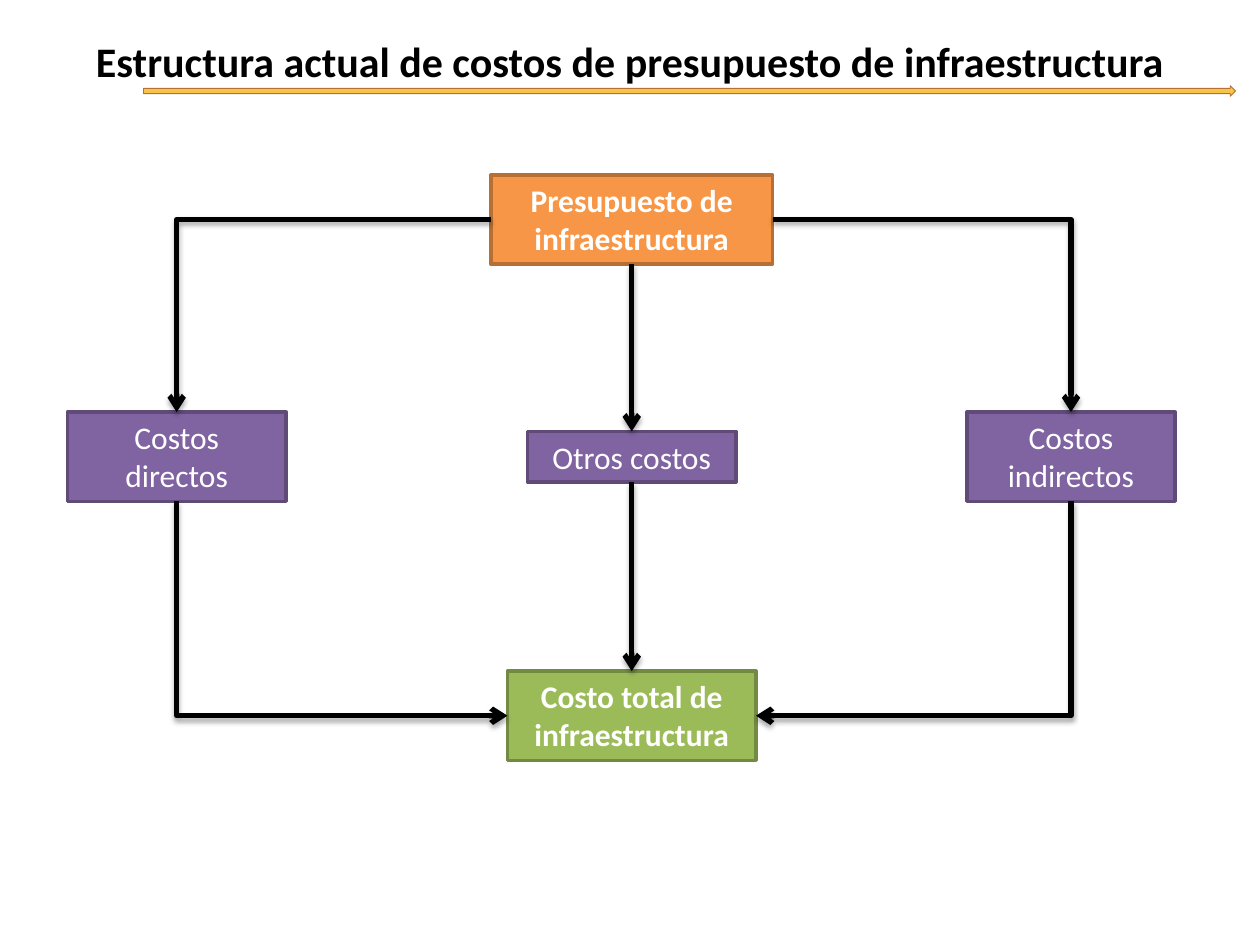
from lxml.etree import SubElement
from pptx import Presentation
from pptx.dml.color import RGBColor
from pptx.enum.shapes import MSO_CONNECTOR, MSO_SHAPE
from pptx.enum.text import MSO_ANCHOR, MSO_AUTO_SIZE, PP_ALIGN
from pptx.oxml.ns import qn
from pptx.util import Pt

COLORS = {
    "black": "000000", "white": "FFFFFF",
    "gold": "F6C448", "orange": "F79646", "orange_edge": "B76F34",
    "purple": "8064A2", "purple_edge": "5F4A78",
    "green": "9BBB59", "green_edge": "738A42",
}
TOP, LEFT, BOTTOM, RIGHT = range(4)
LEFT_X, CENTER_X, RIGHT_X = 101, 361, 612
BUDGET_Y, COSTS_Y, TOTAL_Y = 125.5, 261, 409


def rgb(name):
    return RGBColor.from_string(COLORS[name])


def write(shape, text, size=18, color="white", bold=False):
    frame = shape.text_frame
    frame.word_wrap = True
    frame.auto_size = MSO_AUTO_SIZE.NONE
    frame.vertical_anchor = MSO_ANCHOR.TOP
    frame.text = text
    paragraph = frame.paragraphs[0]
    paragraph.alignment = PP_ALIGN.CENTER
    font = paragraph.runs[0].font
    font.name, font.size, font.bold = "Calibri", Pt(size), bold
    font.color.rgb = rgb(color)


def add_filled(slide, preset, left, top, width, height, fill, edge, edge_width):
    shape = slide.shapes.add_shape(preset, Pt(left), Pt(top), Pt(width), Pt(height))
    shape.shadow.inherit = False
    shape.fill.solid()
    shape.fill.fore_color.rgb = rgb(fill)
    shape.line.color.rgb = rgb(edge)
    shape.line.width = Pt(edge_width)
    return shape


def add_cost(slide, text, center_x, center_y, width, height, color, bold=False):
    box = add_filled(slide, MSO_SHAPE.RECTANGLE, center_x - width / 2,
                     center_y - height / 2, width, height, color, f"{color}_edge", 2)
    write(box, text, bold=bold)
    return box


def style_arrow(arrow):
    """Black line with an open arrowhead and a soft shadow below."""
    arrow.line.color.rgb = rgb("black")
    arrow.line.width = Pt(3)
    SubElement(arrow.line._get_or_add_ln(), qn("a:tailEnd"), type="arrow")
    effects = SubElement(arrow._element.spPr, qn("a:effectLst"))
    shadow = SubElement(effects, qn("a:outerShdw"), blurRad=str(Pt(3.1)),
                        dist=str(Pt(1.8)), dir="5400000", rotWithShape="0")
    shade = SubElement(shadow, qn("a:srgbClr"), val=COLORS["black"])
    SubElement(shade, qn("a:alpha"), val="35000")


def connect(slide, source, source_side, target, target_side, kind):
    arrow = slide.shapes.add_connector(kind, 0, 0, 0, 0)
    arrow.begin_connect(source, source_side)
    arrow.end_connect(target, target_side)
    style_arrow(arrow)
    return arrow


def connect_bent(slide, source, source_side, target, target_side):
    """Join two boxes with a single right-angle bend."""
    arrow = connect(slide, source, source_side, target, target_side, MSO_CONNECTOR.ELBOW)
    arrow._element.spPr.find(qn("a:prstGeom")).set("prst", "bentConnector2")
    if source_side == BOTTOM:
        turn_downwards(arrow)


def turn_downwards(arrow):
    """Make a bent connector leave vertically: a quarter turn about its centre."""
    goes_right = arrow.end_x > arrow.begin_x
    left, top, width, height = arrow.left, arrow.top, arrow.width, arrow.height
    arrow.left = left + (width - height) // 2
    arrow.top = top + (height - width) // 2
    arrow.width, arrow.height = height, width
    frame = arrow._element.spPr.find(qn("a:xfrm"))
    frame.set("rot", "16200000" if goes_right else "5400000")
    frame.set("flipH", "1" if goes_right else "0")
    frame.set("flipV", "0")


def add_title(slide, text):
    title = slide.shapes.title
    title.left, title.top, title.width, title.height = Pt(0), Pt(16.5), Pt(720), Pt(36)
    write(title, text, size=24, color="black", bold=True)


def main():
    deck = Presentation()
    deck.slide_width, deck.slide_height = Pt(720), Pt(540)
    slide = deck.slides.add_slide(deck.slide_layouts[5])

    add_title(slide, "Estructura actual de costos de presupuesto de infraestructura")
    add_filled(slide, MSO_SHAPE.RIGHT_ARROW, 82, 49, 624, 6, "gold", "orange_edge", 0.5)

    budget = add_cost(slide, "Presupuesto de infraestructura",
                      CENTER_X, BUDGET_Y, 161, 51, "orange", bold=True)
    direct = add_cost(slide, "Costos directos", LEFT_X, COSTS_Y, 125, 51, "purple")
    other = add_cost(slide, "Otros costos", CENTER_X, COSTS_Y, 119, 29, "purple")
    indirect = add_cost(slide, "Costos indirectos", RIGHT_X, COSTS_Y, 119, 51, "purple")
    total = add_cost(slide, "Costo total de infraestructura",
                     CENTER_X, TOTAL_Y, 142, 51, "green", bold=True)

    for cost, side in ((direct, LEFT), (indirect, RIGHT)):
        connect_bent(slide, budget, side, cost, TOP)
        connect_bent(slide, cost, BOTTOM, total, side)
    for source, target in ((budget, other), (other, total)):
        connect(slide, source, BOTTOM, target, TOP, MSO_CONNECTOR.STRAIGHT)

    deck.save("out.pptx")


if __name__ == "__main__":
    main()
